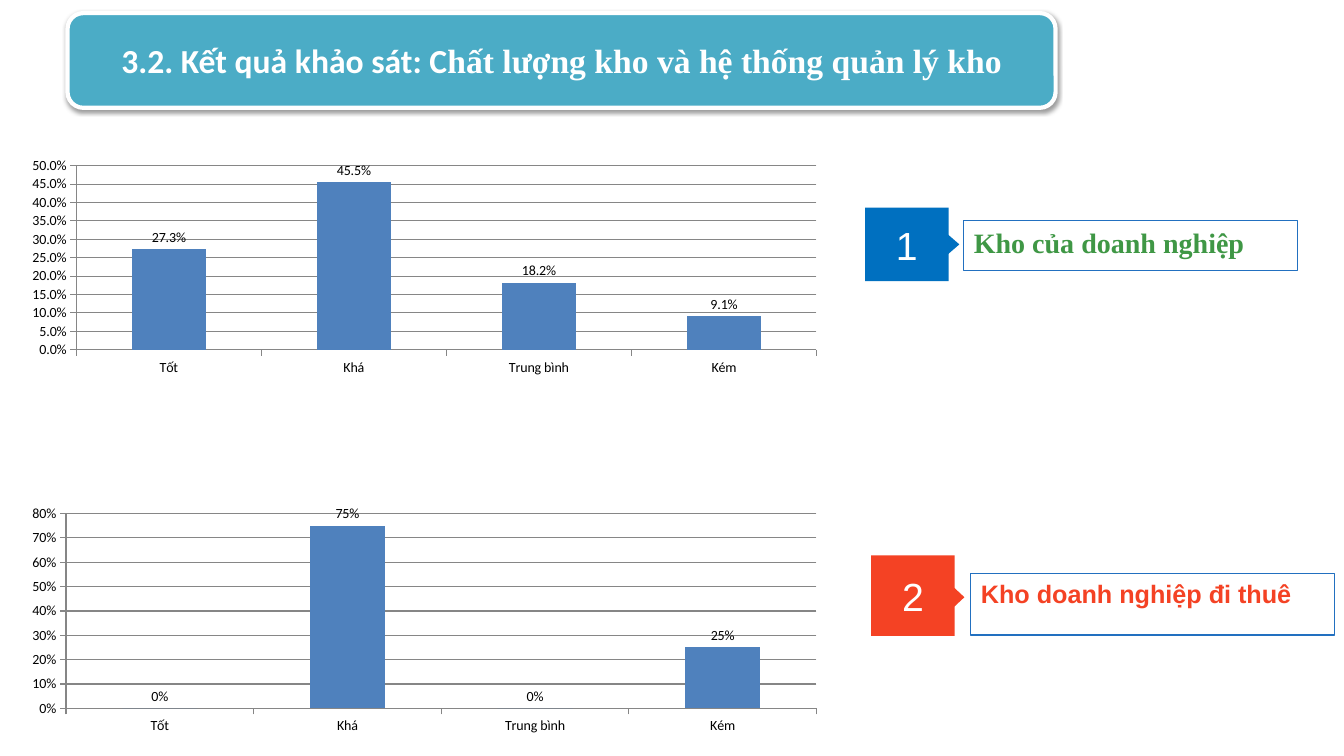
from dataclasses import dataclass

import pptx
import pptx.chart.data
import pptx.dml.color
import pptx.enum.chart
import pptx.enum.shapes
import pptx.enum.text
import pptx.oxml
import pptx.oxml.ns
import pptx.util

Inches = pptx.util.Inches
Pt = pptx.util.Pt
RGBColor = pptx.dml.color.RGBColor
Shape = pptx.enum.shapes.MSO_SHAPE
Align = pptx.enum.text.PP_ALIGN
Anchor = pptx.enum.text.MSO_ANCHOR

WHITE = RGBColor(0xFF, 0xFF, 0xFF)
BLACK = RGBColor(0, 0, 0)
TEAL = RGBColor(0x4B, 0xAC, 0xC6)
BAR_BLUE = RGBColor(0x4F, 0x81, 0xBD)
GRID_GRAY = RGBColor(0x86, 0x86, 0x86)
BADGE_BLUE = RGBColor(0x00, 0x70, 0xC0)
BORDER_BLUE = RGBColor(0x22, 0x70, 0xC0)
GREEN = RGBColor(0x3F, 0x97, 0x45)
RED = RGBColor(0xF4, 0x42, 0x24)

RATINGS = ("Tốt", "Khá", "Trung bình", "Kém")
Box = tuple[float, float, float, float]


@dataclass(frozen=True)
class Survey:
    """One warehouse type: its rating chart and its numbered caption."""
    number: str
    caption: str
    font: str
    size: float
    caption_color: RGBColor
    badge_color: RGBColor
    chart_box: Box
    badge_box: Box
    pointer_box: Box
    caption_box: Box
    shares: tuple[float, ...]
    percent_format: str
    axis_max: float
    axis_step: float


SURVEYS = (
    Survey("1", "Kho của doanh nghiệp", "Times New Roman", 20, GREEN, BADGE_BLUE,
           (0.16, 1.52, 8.1, 2.25), (8.58, 2.06, 0.83, 0.73),
           (9.31, 2.35, 0.26, 0.15), (9.56, 2.19, 3.31, 0.49),
           (0.273, 0.455, 0.182, 0.091), "0.0%", 0.5, 0.05),
    Survey("2", "Kho doanh nghiệp đi thuê", "Arial", 18, RED, RED,
           (0.16, 4.97, 8.1, 2.36), (8.64, 5.51, 0.83, 0.8),
           (9.35, 5.85, 0.28, 0.15), (9.63, 5.69, 3.61, 0.61),
           (0, 0.75, 0, 0.25), "0%", 0.8, 0.1),
)


def add_box(shapes, kind, box: Box, fill: RGBColor | None = None,
            line: RGBColor | None = None, width: float = 0.75):
    shape = shapes.add_shape(kind, *map(Inches, box))
    shape.shadow.inherit = False
    if fill is None:
        shape.fill.background()
    else:
        shape.fill.solid()
        shape.fill.fore_color.rgb = fill
    if line is None:
        shape.line.fill.background()
    else:
        shape.line.color.rgb = line
        shape.line.width = Pt(width)
    return shape


def write(shape, text: str, *, font: str, size: float, color: RGBColor,
          bold: bool = False, align=Align.LEFT, anchor=Anchor.TOP) -> None:
    """Append a formatted run to the first paragraph of the shape."""
    frame = shape.text_frame
    frame.word_wrap = True
    frame.vertical_anchor = anchor
    paragraph = frame.paragraphs[0]
    paragraph.alignment = align
    run = paragraph.add_run()
    run.text = text
    run.font.name = font
    run.font.size = Pt(size)
    run.font.bold = bold
    run.font.color.rgb = color


def add_shadow(shape) -> None:
    effects = shape._element.spPr.find(pptx.oxml.ns.qn("a:effectLst"))
    effects.append(pptx.oxml.parse_xml(
        f'<a:outerShdw {pptx.oxml.ns.nsdecls("a")} blurRad="{Pt(3.1)}" '
        f'dist="{Pt(1.6)}" dir="5400000" rotWithShape="0">'
        '<a:srgbClr val="000000"><a:alpha val="38000"/></a:srgbClr></a:outerShdw>'))


def add_title(shapes) -> None:
    title = add_box(shapes, Shape.ROUNDED_RECTANGLE, (0.67, 0.13, 9.8, 0.94),
                    TEAL, WHITE, 3)
    add_shadow(title)
    for text, font in (("3.2. Kết quả khảo sát: C", "Calibri"),
                       ("hất lượng kho và hệ thống quản lý kho", "Times New Roman")):
        write(title, text, font=font, size=24, color=WHITE, bold=True,
              align=Align.CENTER, anchor=Anchor.MIDDLE)


def add_rating_chart(shapes, survey: Survey) -> None:
    data = pptx.chart.data.CategoryChartData(number_format=survey.percent_format)
    data.categories = RATINGS
    data.add_series("Series 1", survey.shares)
    chart = shapes.add_chart(pptx.enum.chart.XL_CHART_TYPE.COLUMN_CLUSTERED,
                             *map(Inches, survey.chart_box), data).chart
    chart.has_legend = False
    chart.has_title = False
    chart.font.name = "Calibri"
    chart.font.size = Pt(10)
    chart.font.color.rgb = BLACK

    # Axes
    shares_axis = chart.value_axis
    shares_axis.minimum_scale = 0
    shares_axis.maximum_scale = survey.axis_max
    shares_axis.major_unit = survey.axis_step
    shares_axis.tick_labels.number_format = survey.percent_format
    shares_axis.tick_labels.number_format_is_linked = False
    shares_axis.has_major_gridlines = True
    shares_axis.major_gridlines.format.line.color.rgb = GRID_GRAY
    for axis in (chart.category_axis, shares_axis):
        axis.major_tick_mark = pptx.enum.chart.XL_TICK_MARK.OUTSIDE
        axis.format.line.color.rgb = GRID_GRAY

    # Bars and their labels
    plot = chart.plots[0]
    plot.gap_width = 150
    plot.vary_by_categories = False
    bars = plot.series[0].format.fill
    bars.solid()
    bars.fore_color.rgb = BAR_BLUE
    plot.has_data_labels = True
    labels = plot.data_labels
    labels.show_value = True
    labels.number_format = survey.percent_format
    labels.number_format_is_linked = False
    labels.position = pptx.enum.chart.XL_LABEL_POSITION.OUTSIDE_END


def add_caption(shapes, survey: Survey) -> None:
    marker = shapes.add_group_shape().shapes
    badge = add_box(marker, Shape.RECTANGLE, survey.badge_box, survey.badge_color)
    write(badge, survey.number, font="Arial", size=28, color=WHITE,
          align=Align.CENTER, anchor=Anchor.MIDDLE)
    pointer = add_box(marker, Shape.ISOSCELES_TRIANGLE, survey.pointer_box,
                      survey.badge_color)
    pointer.rotation = 90
    caption = add_box(shapes, Shape.RECTANGLE, survey.caption_box, line=BORDER_BLUE)
    write(caption, survey.caption, font=survey.font, size=survey.size,
          color=survey.caption_color, bold=True)


def main() -> None:
    deck = pptx.Presentation()
    deck.slide_width = Inches(13.33)
    deck.slide_height = Inches(7.5)
    shapes = deck.slides.add_slide(deck.slide_layouts[6]).shapes
    add_title(shapes)
    for survey in SURVEYS:
        add_rating_chart(shapes, survey)
        add_caption(shapes, survey)
    deck.save("out.pptx")


if __name__ == "__main__":
    main()
